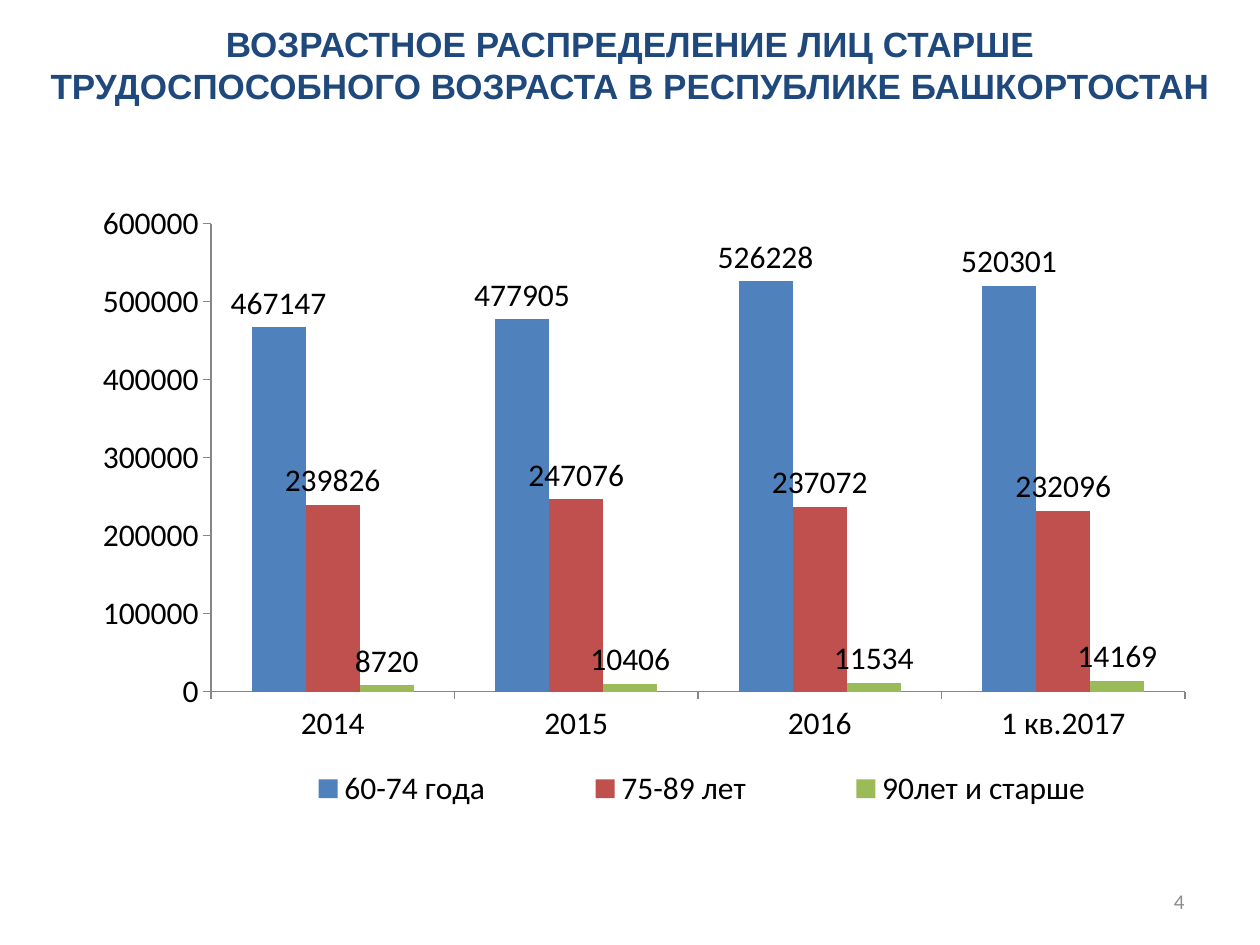
import pptx
import pptx.chart.data
import pptx.dml.color
import pptx.enum.chart
import pptx.enum.text
import pptx.oxml
import pptx.oxml.ns
import pptx.util

WIDTH, HEIGHT = 10, 7.5
YEARS = ["2014", "2015", "2016", "1 кв.2017"]
AGES = [
    ("60-74 года", "4F81BD", [467147, 477905, 526228, 520301]),
    ("75-89 лет", "C0504D", [239826, 247076, 237072, 232096]),
    ("90лет и старше", "9BBB59", [8720, 10406, 11534, 14169]),
]


def color(code):
    return pptx.dml.color.RGBColor.from_string(code)


def set_font(font, size, name, code, bold=False):
    font.size = pptx.util.Pt(size)
    font.name = name
    font.bold = bold
    font.color.rgb = color(code)


def place(parent, index, box, inner=False):
    """Fix a chart part at box: left, top, width, height as shares of the chart."""
    for old in parent.findall(pptx.oxml.ns.qn("c:layout")):
        parent.remove(old)
    target = '<c:layoutTarget val="inner"/>' if inner else ""
    modes = "".join(f'<c:{axis}Mode val="edge"/>' for axis in "xy")
    sizes = "".join(f'<c:{key} val="{val}"/>' for key, val in zip("xywh", box))
    parent.insert(index, pptx.oxml.parse_xml(
        f'<c:layout {pptx.oxml.ns.nsdecls("c")}><c:manualLayout>'
        f"{target}{modes}{sizes}</c:manualLayout></c:layout>"))


class Page:
    """Style and current slide; boxes are shares of the slide's size."""
    head, body = "Arial", "Calibri"
    navy, gray, black, axis = "1F497D", "8C8C8C", "000000", "868686"

    def __init__(self, deck):
        self.slide = deck.slides.add_slide(deck.slide_layouts[6])

    def rect(self, box):
        sides = (WIDTH, HEIGHT, WIDTH, HEIGHT)
        return [pptx.util.Inches(part * side) for part, side in zip(box, sides)]

    def text(self, box, lines, align, size, name, code, bold=False):
        frame = self.slide.shapes.add_textbox(*self.rect(box)).text_frame
        frame.word_wrap = True
        frame.vertical_anchor = pptx.enum.text.MSO_ANCHOR.MIDDLE
        frame.text = "\n".join(lines)
        for para in frame.paragraphs:
            para.alignment = align
            for run in para.runs:
                set_font(run.font, size, name, code, bold)

    def columns(self, box, cats, rows, plot_box, key_box):
        data = pptx.chart.data.CategoryChartData()
        data.categories = cats
        for name, _, vals in rows:
            data.add_series(name, vals)
        kind = pptx.enum.chart.XL_CHART_TYPE.COLUMN_CLUSTERED
        chart = self.slide.shapes.add_chart(kind, *self.rect(box), data).chart
        set_font(chart.font, 18, self.body, self.black)
        chart.has_title = False
        plot = chart.plots[0]
        plot.gap_width = 150
        plot.overlap = 0
        plot.vary_by_categories = False
        for series, (_, code, _) in zip(plot.series, rows):
            series.format.fill.solid()
            series.format.fill.fore_color.rgb = color(code)
            labels = series.data_labels
            labels.show_value = True
            labels.position = pptx.enum.chart.XL_LABEL_POSITION.OUTSIDE_END
        for axis in (chart.category_axis, chart.value_axis):
            axis.has_major_gridlines = False
            axis.major_tick_mark = pptx.enum.chart.XL_TICK_MARK.OUTSIDE
            axis.format.line.color.rgb = color(self.axis)
            axis.format.line.width = pptx.util.Pt(0.75)
        chart.value_axis.maximum_scale = 600000
        chart.value_axis.minimum_scale = 0
        chart.value_axis.major_unit = 100000
        chart.has_legend = True
        chart.legend.position = pptx.enum.chart.XL_LEGEND_POSITION.RIGHT
        chart.legend.include_in_layout = False
        area = plot._element.getparent()
        place(area, 0, plot_box, inner=True)
        key = chart.legend._element
        place(key, 1, key_box)


def main():
    deck = pptx.Presentation()
    deck.slide_width = pptx.util.Inches(WIDTH)
    deck.slide_height = pptx.util.Inches(HEIGHT)
    page = Page(deck)
    align = pptx.enum.text.PP_ALIGN
    page.text((0.717, 0.927, 0.233, 0.053), ["4"], align.RIGHT,
              12, page.body, page.gray)
    page.text((0, 0.017, 1, 0.103),
              ["ВОЗРАСТНОЕ РАСПРЕДЕЛЕНИЕ ЛИЦ СТАРШЕ",
               "ТРУДОСПОСОБНОГО ВОЗРАСТА В РЕСПУБЛИКЕ БАШКОРТОСТАН"],
              align.CENTER, 20, page.head, page.navy, bold=True)
    page.columns((0.059, 0.207, 0.882, 0.675), YEARS, AGES,
                 plot_box=(0.123, 0.044, 0.877, 0.734),
                 key_box=(0.13, 0.88, 0.87, 0.1))
    deck.save("out.pptx")


if __name__ == "__main__":
    main()
